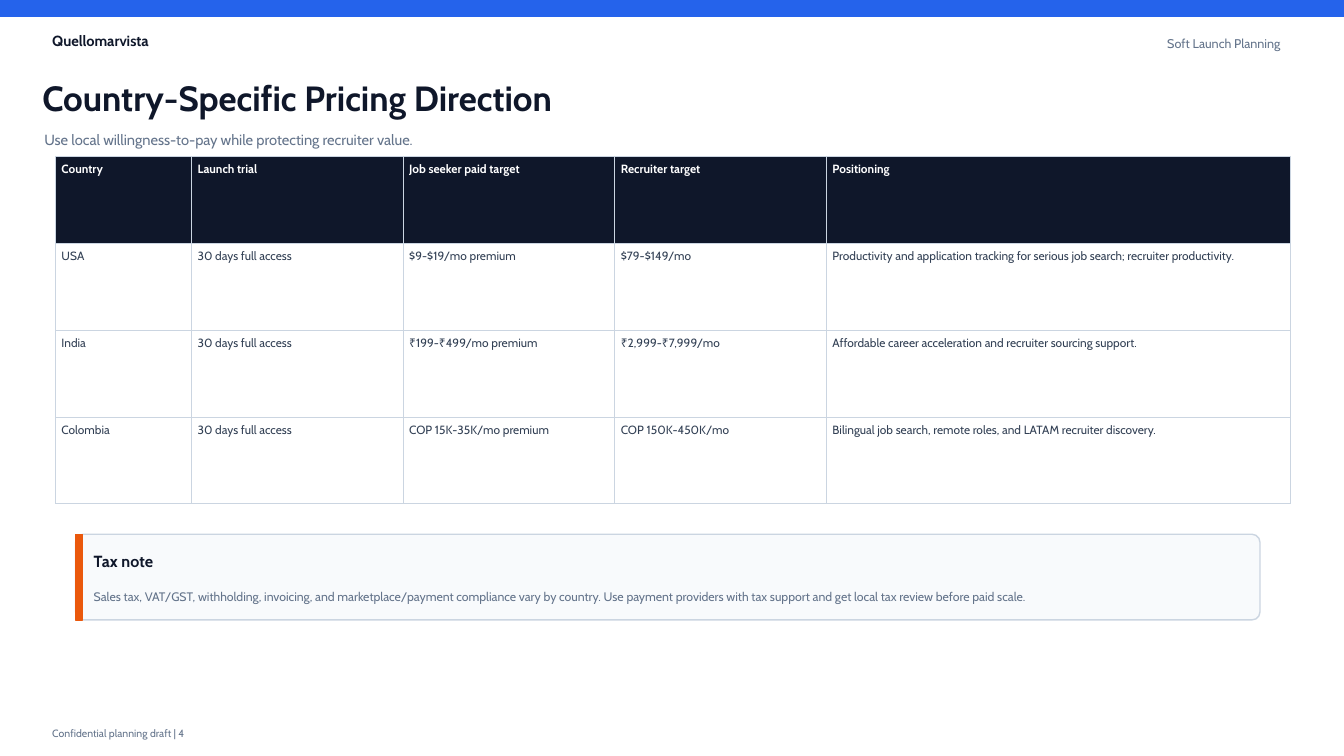
from lxml import etree
from pptx import Presentation
from pptx.dml.color import RGBColor
from pptx.enum.shapes import MSO_SHAPE
from pptx.enum.text import MSO_ANCHOR, PP_ALIGN
from pptx.oxml.ns import qn
from pptx.util import Pt

RECT, ROUND = MSO_SHAPE.RECTANGLE, MSO_SHAPE.ROUNDED_RECTANGLE
MIDDLE, TOP = MSO_ANCHOR.MIDDLE, MSO_ANCHOR.TOP
LEFT, RIGHT = PP_ALIGN.LEFT, PP_ALIGN.RIGHT

WIDE, HIGH = 960, 540
FONT = "Cabin"
INK, GREY, SLATE, EDGE = "0F172A", "64748B", "334155", "CBD5E1"
BLUE, ORANGE, PALE, WHITE = "2563EB", "EA580C", "F8FAFC", "FFFFFF"

COLS = [97.2, 151.2, 151.2, 151.2, 331.2]
ROWS = [
    ["Country", "Launch trial", "Job seeker paid target", "Recruiter target", "Positioning"],
    ["USA", "30 days full access", "$9-$19/mo premium", "$79-$149/mo",
     "Productivity and application tracking for serious job search; recruiter productivity."],
    ["India", "30 days full access", "₹199-₹499/mo premium", "₹2,999-₹7,999/mo",
     "Affordable career acceleration and recruiter sourcing support."],
    ["Colombia", "30 days full access", "COP 15K-35K/mo premium", "COP 150K-450K/mo",
     "Bilingual job search, remote roles, and LATAM recruiter discovery."],
]


def color(code):
    return RGBColor.from_string(code)


def apply(item, values):
    for name, value in values.items():
        setattr(item, name, value)


def write(frame, words, size, code, bold=False, align=LEFT):
    para = frame.paragraphs[0]
    para.alignment = align
    run = para.add_run()
    run.text = words
    apply(run.font, {"name": FONT, "size": Pt(size), "bold": bold})
    run.font.color.rgb = color(code)


def label(slide, box, words, size, code, bold=False, align=LEFT, pad=0):
    frame = slide.shapes.add_textbox(*map(Pt, box)).text_frame
    apply(frame, {
        "word_wrap": True, "vertical_anchor": MIDDLE,
        "margin_left": Pt(pad), "margin_right": Pt(pad),
        "margin_top": Pt(pad / 2), "margin_bottom": Pt(pad / 2),
    })
    write(frame, words, size, code, bold, align)


def block(slide, kind, box, fill, line):
    shape = slide.shapes.add_shape(kind, *map(Pt, box))
    shape.shadow.inherit = False
    shape.fill.solid()
    shape.fill.fore_color.rgb = color(fill)
    shape.line.color.rgb = color(line)
    shape.line.width = Pt(1)
    return shape


def header(slide, box):
    x, y, w, h = box
    block(slide, RECT, (x, y, w, 11.52), BLUE, BLUE)
    label(slide, (x + 30.24, y + 20.16, 165.6, 18), "Quellomarvista", 10.5, INK, True, pad=7.2)
    label(slide, (x + w - 214.8, y + 21.6, 176.4, 18.72), "Soft Launch Planning", 9, GREY,
          align=RIGHT, pad=7.2)
    label(slide, (x + 30.24, y + 51.84, 626.4, 36), "Country-Specific Pricing Direction", 25, INK, True)
    label(slide, (x + 31.68, y + 87.84, 684, 24.48),
          "Use local willingness-to-pay while protecting recruiter value.", 10.5, GREY)


def border(cell):
    props = cell._tc.get_or_add_tcPr()
    for spot, side in enumerate(("lnL", "lnR", "lnT", "lnB")):
        line = etree.Element(qn("a:" + side), w=str(Pt(0.7)))
        fill = etree.SubElement(line, qn("a:solidFill"))
        etree.SubElement(fill, qn("a:srgbClr"), val=EDGE)
        props.insert(spot, line)


def prices(slide, box):
    table = slide.shapes.add_table(len(ROWS), len(COLS), *map(Pt, box)).table
    table.horz_banding = False
    for col, width in zip(table.columns, COLS):
        col.width = Pt(width)
    for r, words in enumerate(ROWS):
        table.rows[r].height = Pt(box[3] / len(ROWS))
        head = r == 0
        for c, word in enumerate(words):
            cell = table.cell(r, c)
            apply(cell, {"vertical_anchor": TOP} | {
                "margin_" + side: Pt(4.32) for side in ("left", "right", "top", "bottom")})
            cell.fill.solid()
            cell.fill.fore_color.rgb = color(INK if head else WHITE)
            border(cell)
            write(cell.text_frame, word, 8.5, WHITE if head else SLATE, head)


def note(slide, box):
    x, y, w, h = box
    block(slide, ROUND, box, PALE, EDGE).adjustments[0] = 0.094
    block(slide, RECT, (x, y, 5.04, h), ORANGE, ORANGE)
    label(slide, (x + 12.96, y + 10.08, w - 21.6, 18), "Tax note", 11.5, INK, True)
    label(slide, (x + 12.96, y + 34.56, w - 20.16, 19.44),
          "Sales tax, VAT/GST, withholding, invoicing, and marketplace/payment compliance vary by country. "
          "Use payment providers with tax support and get local tax review before paid scale.", 8.8, GREY)


def footer(slide, box):
    label(slide, box, "Confidential planning draft | 4", 7.5, GREY, pad=7.2)


def main():
    deck = Presentation()
    apply(deck, {"slide_width": Pt(WIDE), "slide_height": Pt(HIGH)})
    slide = deck.slides.add_slide(deck.slide_layouts[6])
    header(slide, (0, 0, WIDE, 112.32))
    prices(slide, (39.6, 111.6, sum(COLS), 248.4))
    note(slide, (54, 381.6, 846, 61.2))
    footer(slide, (30.24, 516.96, 331.2, 14.4))
    deck.save("out.pptx")


if __name__ == "__main__":
    main()
